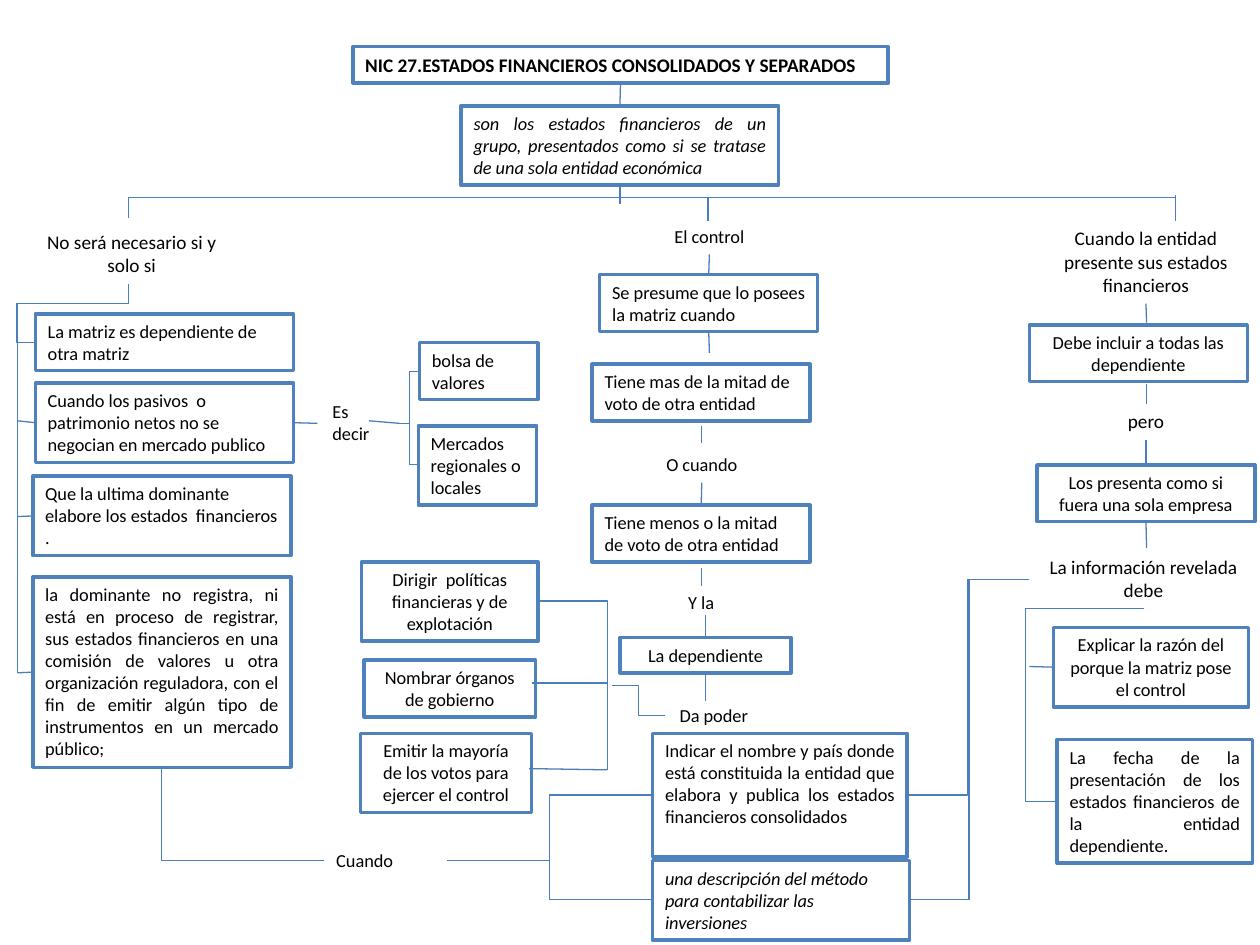
from dataclasses import dataclass

from lxml import etree
from pptx import Presentation
from pptx import util as u
from pptx.dml import color
from pptx.enum import shapes, text
from pptx.oxml import ns

COLOURS = {"paper": "FFFFFF", "border": "4F81BD", "link": "4B7EBC", "ink": "000000"}
TOP, LEFT, BOTTOM, RIGHT = range(4)
CENTRE, JUSTIFY = text.PP_ALIGN.CENTER, text.PP_ALIGN.JUSTIFY


def rgb(name):
    return color.RGBColor.from_string(COLOURS[name])


def fill_text(shape, words, align, **font):
    frame = shape.text_frame
    layout = {"word_wrap": True, "auto_size": text.MSO_AUTO_SIZE.NONE,
              "vertical_anchor": text.MSO_ANCHOR.TOP}
    for name, value in layout.items():
        setattr(frame, name, value)
    para = frame.paragraphs[0]
    para.alignment = align
    span = para.add_run()
    span.text = words
    for name, value in {"name": "Calibri", "size": u.Pt(10.5), **font}.items():
        setattr(span.font, name, value)
    span.font.color.rgb = rgb("ink")
    return shape


@dataclass
class Region:
    """Part of the page; every position is in inches from its top left corner."""
    page: object
    left: float
    top: float

    def point(self, x, y):
        return u.Inches(self.left + x), u.Inches(self.top + y)

    def label(self, x, y, width, height, words, align=CENTRE, **font):
        box = self.page.shapes.add_textbox(
            *self.point(x, y), u.Inches(width), u.Inches(height))
        return fill_text(box, words, align, **font)

    def card(self, x, y, width, height, words, align=text.PP_ALIGN.LEFT, **font):
        box = self.page.shapes.add_shape(
            shapes.MSO_SHAPE.RECTANGLE, *self.point(x, y),
            u.Inches(width), u.Inches(height))
        box.shadow.inherit = False
        box.fill.solid()
        box.fill.fore_color.rgb = rgb("paper")
        box.line.color.rgb = rgb("border")
        box.line.width = u.Pt(2)
        return fill_text(box, words, align, **font)

    def connector(self, kind, start, end):
        link = self.page.shapes.add_connector(kind, *self.point(*start), *self.point(*end))
        link.line.color.rgb = rgb("link")
        link.line.width = u.Pt(0.75)
        etree.SubElement(link.element.spPr, ns.qn("a:effectLst"))
        return link

    def line(self, start, end):
        """Each end is an (x, y) point or a (box, side) pair to join."""
        free = [(0, 0) if hasattr(spot[0], "text_frame") else spot for spot in (start, end)]
        link = self.connector(shapes.MSO_CONNECTOR.STRAIGHT, *free)
        for spot, join in ((start, link.begin_connect), (end, link.end_connect)):
            if hasattr(spot[0], "text_frame"):
                join(*spot)

    def elbow(self, start, end, via):
        """Bent connector whose upright leg stands at x = via."""
        link = self.connector(shapes.MSO_CONNECTOR.ELBOW, start, end)
        guides = link.element.spPr.find(ns.qn("a:prstGeom")).get_or_add_avLst()
        share = round((via - start[0]) / (end[0] - start[0]) * 100000)
        etree.SubElement(guides, ns.qn("a:gd"), name="adj1", fmla=f"val {share}")


def add_header(area):
    title = area.card(1.8, 0.07, 4.25, 0.29,
                      "NIC 27.ESTADOS FINANCIEROS CONSOLIDADOS Y SEPARADOS",
                      size=u.Pt(11), bold=True)
    meaning = area.card(2.66, 0.54, 2.52, 0.63,
                        "son los estados financieros de un grupo, presentados como si "
                        "se tratase de una sola entidad económica", JUSTIFY, italic=True)
    area.line((title, BOTTOM), (meaning, TOP))
    area.line((meaning, BOTTOM), (3.92, 1.32))
    # Bar and the drops to the three branches
    area.line((8.33, 1.27), (0.02, 1.27))
    for x, top, bottom in ((0.02, 1.27, 1.43), (4.62, 1.27, 1.45), (8.33, 1.25, 1.45)):
        area.line((x, top), (x, bottom))


def add_exemptions(area):
    area.label(0.04, 0.08, 1.81, 0.47, "No será necesario si y solo si", size=u.Pt(11))
    area.line((0.92, 0.55), (0.92, 0.71))
    area.card(0.18, 0.79, 2.05, 0.45, "La matriz es dependiente de otra matriz")
    unlisted = area.card(0.18, 1.34, 2.05, 0.63,
                         "Cuando los pasivos  o patrimonio netos no se negocian "
                         "en mercado publico")
    parent = area.card(0.16, 2.08, 2.05, 0.63,
                       "Que la ultima dominante elabore los estados  financieros .")
    unregistered = area.card(
        0.16, 2.88, 2.05, 1.51,
        "la dominante no registra, ni está en proceso de registrar, sus estados "
        "financieros en una comisión de valores u otra organización reguladora, con el "
        "fin de emitir algún tipo de instrumentos en un mercado público;", JUSTIFY)
    # Spine and its branches
    area.elbow((0.92, 0.71), (0.18, 1.02), 0.03)
    area.line((0.04, 3.64), (0.04, 0.71))
    for box, y in ((unlisted, 1.64), (parent, 2.4), (unregistered, 3.64)):
        area.line((box, LEFT), (0.04, y))
    area.line((unlisted, RIGHT), (2.42, 1.66))


def add_markets(area):
    area.label(0.24, 0.43, 0.63, 0.45, "Es decir", text.PP_ALIGN.LEFT)
    area.line((0.63, 0.64), (0.87, 0.66))
    area.card(1.03, 0.02, 0.94, 0.45, "bolsa de valores")
    area.card(1.02, 0.68, 0.94, 0.63, "Mercados regionales o locales")
    for start in ((1.03, 0.25), (1.02, 0.99)):
        area.elbow(start, (0.87, 0.66), 0.95)


def add_control(area):
    control = area.label(0.32, 0.04, 1.42, 0.28, "El control")
    presumed = area.card(0.16, 0.48, 1.73, 0.45, "Se presume que lo posees la matriz cuando")
    area.card(0.1, 1.19, 1.73, 0.45, "Tiene mas de la mitad de voto de otra entidad")
    otherwise = area.label(0.26, 1.85, 1.42, 0.28, "O cuando")
    minority = area.card(0.1, 2.31, 1.73, 0.45,
                         "Tiene menos o la mitad de voto de otra entidad")
    area.label(0.58, 2.94, 0.77, 0.28, "Y la")
    dependent = area.card(0.32, 3.36, 1.36, 0.28, "La dependiente", CENTRE)
    area.label(0.68, 3.84, 0.77, 0.28, "Da poder")
    for start, end in (
            ((control, BOTTOM), (presumed, TOP)),
            ((presumed, BOTTOM), (1.03, 1.1)),
            ((0.97, 1.68), (0.97, 1.82)),
            ((otherwise, BOTTOM), (minority, TOP)),
            ((0.97, 2.81), (0.97, 2.95)),
            ((1, 3.18), (dependent, TOP)),
            ((dependent, BOTTOM), (1, 3.86))):
        area.line(start, end)


def add_powers(area):
    for x, y, width, height, words in (
            (0.07, 0.06, 1.4, 0.63, "Dirigir  políticas financieras y de explotación"),
            (0.09, 0.84, 1.36, 0.45, "Nombrar órganos de gobierno"),
            (0.06, 1.42, 1.36, 0.63, "Emitir la mayoría de los votos para ejercer el control")):
        area.card(x, y, width, height, words, CENTRE)
    area.elbow((1.47, 0.37), (2.02, 1.71), 2.02)
    area.elbow((2.48, 1.28), (2.06, 1.04), 2.27)
    area.line((2.02, 1.02), (1.42, 1.02))
    area.line((2.02, 1.71), (1.4, 1.7))


def add_presentation(area):
    large = {"size": u.Pt(11)}
    entity = area.label(0.09, 0.05, 1.81, 0.66,
                        "Cuando la entidad presente sus estados financieros", **large)
    area.card(0.07, 0.88, 1.73, 0.45, "Debe incluir a todas las dependiente", CENTRE)
    but = area.label(0.09, 1.5, 1.81, 0.29, "pero", **large)
    single = area.card(0.13, 1.99, 1.73, 0.45,
                       "Los presenta como si fuera una sola empresa", CENTRE)
    area.label(0.07, 2.66, 1.81, 0.47, "La información revelada debe", **large)
    reason = area.card(0.26, 3.28, 1.55, 0.63,
                       "Explicar la razón del porque la matriz pose el control", CENTRE)
    area.card(0.29, 4.17, 1.55, 0.98,
              "La fecha de la presentación de los estados financieros de la entidad "
              "dependiente.", JUSTIFY)
    for start, end in (
            ((entity, BOTTOM), (1, 0.86)),
            ((1, 1.35), (1, 1.51)),
            ((but, BOTTOM), (single, TOP)),
            ((single, BOTTOM), (1, 2.65)),
            ((reason, LEFT), (0.07, 3.59))):
        area.line(start, end)
    area.elbow((0.98, 3.13), (0.29, 4.66), 0.04)


def add_disclosure(area):
    area.card(3.98, 1.32, 2.02, 0.98,
              "Indicar el nombre y país donde está constituida la entidad que elabora y "
              "publica los estados financieros consolidados", JUSTIFY)
    area.card(3.98, 2.33, 2.04, 0.63,
              "una descripción del método para contabilizar las inversiones", italic=True)
    area.label(1.37, 2.19, 0.98, 0.28, "Cuando", text.PP_ALIGN.LEFT)
    for start, end, via in (
            ((6.97, 0.1), (5.99, 1.81), 6.48),
            ((6.01, 2.64), (6.97, 0.1), 6.49),
            ((2.35, 2.33), (3.98, 1.81), 3.16),
            ((2.35, 2.33), (3.98, 2.64), 3.16),
            ((1.37, 2.33), (0.08, 1.59), 0.08)):
        area.elbow(start, end, via)


def main():
    deck = Presentation()
    deck.slide_width, deck.slide_height = u.Inches(10), u.Inches(7.5)
    page = deck.slides.add_slide(deck.slide_layouts[6])
    for build, left, top in (
            (add_header, 1, 0.3), (add_exemptions, 0.1, 1.7), (add_markets, 2.3, 2.7),
            (add_control, 4.6, 1.7), (add_powers, 2.8, 4.4),
            (add_presentation, 8.1, 1.7), (add_disclosure, 1.2, 4.5)):
        build(Region(page, left, top))
    deck.save("out.pptx")


if __name__ == "__main__":
    main()
